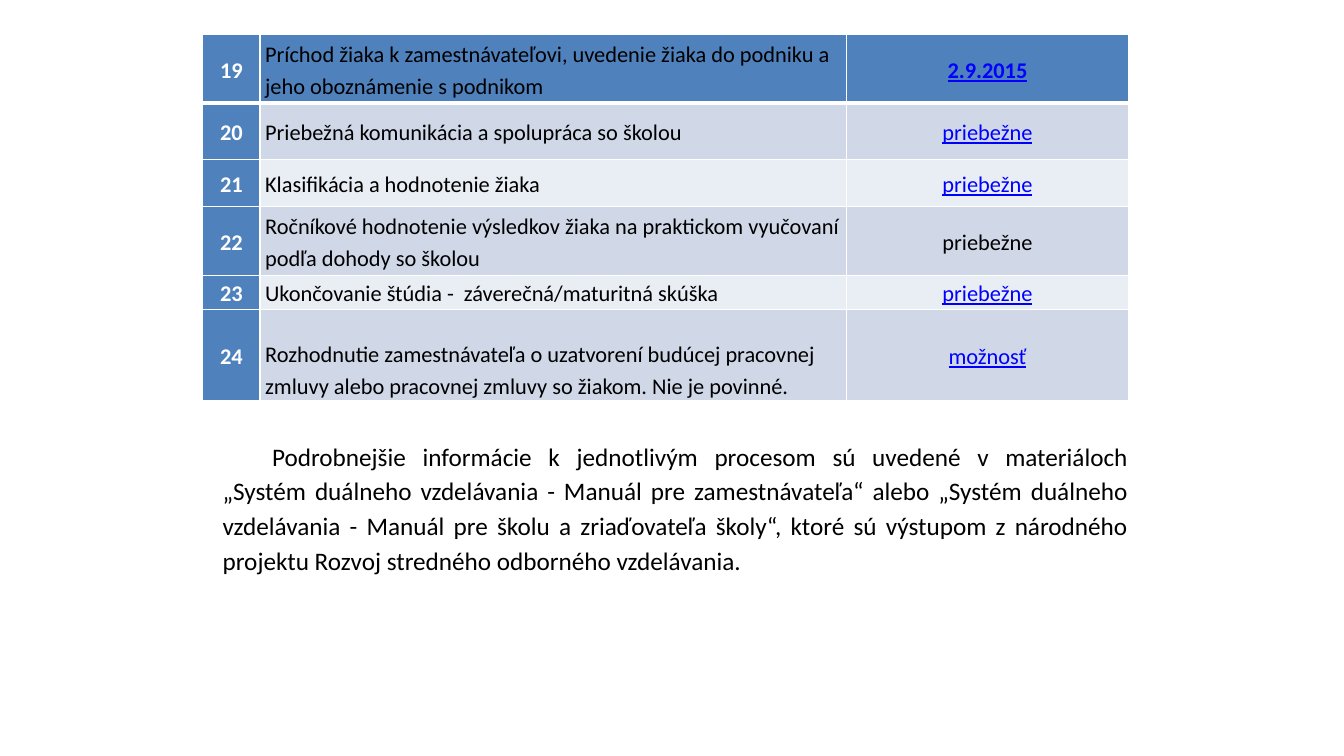
from lxml.etree import SubElement
from pptx import Presentation
from pptx.dml.color import RGBColor
from pptx.enum.text import MSO_ANCHOR, MSO_AUTO_SIZE, PP_ALIGN
from pptx.oxml.ns import qn
from pptx.util import Inches, Pt

COLORS = {
    "blue": "4F81BD",
    "band": "D0D8E8",
    "light": "E9EDF4",
    "link": "0000FF",
    "black": "000000",
    "white": "FFFFFF",
}
COL_WIDTHS = [0.57, 5.82, 2.79]
ROW_HEIGHTS = [0.68, 0.56, 0.47, 0.68, 0.34, 0.9]
STEPS = [
    ("Príchod žiaka k zamestnávateľovi, uvedenie žiaka do podniku a jeho oboznámenie s podnikom", "2.9.2015"),
    ("Priebežná komunikácia a spolupráca so školou", "priebežne"),
    ("Klasifikácia a hodnotenie žiaka", "priebežne"),
    ("Ročníkové hodnotenie výsledkov žiaka na praktickom vyučovaní podľa dohody so školou", "priebežne"),
    ("Ukončovanie štúdia -  záverečná/maturitná skúška", "priebežne"),
    ("Rozhodnutie zamestnávateľa o uzatvorení budúcej pracovnej zmluvy alebo pracovnej zmluvy so žiakom. Nie je povinné.", "možnosť"),
]
FIRST_STEP = 19
PLAIN_STEP = 22
NOTE = (
    "Podrobnejšie informácie k jednotlivým procesom sú uvedené v materiáloch "
    "„Systém duálneho vzdelávania - Manuál pre zamestnávateľa“ alebo "
    "„Systém duálneho vzdelávania - Manuál pre školu a zriaďovateľa školy“, "
    "ktoré sú výstupom z národného projektu Rozvoj stredného odborného vzdelávania."
)


def write(tf, text, align, size, color, after=0, **font):
    p = tf.paragraphs[0]
    p.alignment = align
    p.line_spacing = 1.15
    p.space_after = Pt(after)
    r = p.add_run()
    r.text = text
    r.font.color.rgb = RGBColor.from_string(COLORS[color])
    for name, value in {"name": "Calibri", "size": Pt(size), **font}.items():
        setattr(r.font, name, value)
    return p


def add_borders(cell, top, bottom):
    tcPr = cell._tc.get_or_add_tcPr()
    for side, width in {"L": 1, "R": 1, "T": top, "B": bottom}.items():
        ln = SubElement(tcPr, qn(f"a:ln{side}"), w=str(Pt(width)))
        fill = SubElement(ln, qn("a:solidFill"))
        SubElement(fill, qn("a:srgbClr"), val=COLORS["white"])


prs = Presentation()
prs.slide_width = Inches(13.33)
prs.slide_height = Inches(7.5)
s = prs.slides.add_slide(prs.slide_layouts[6])

table = s.shapes.add_table(
    len(STEPS), len(COL_WIDTHS), Inches(2.01), Inches(0.34), Inches(9.18), Inches(3.63)
).table
for col, width in zip(table.columns, COL_WIDTHS):
    col.width = Inches(width)
for row, height in zip(table.rows, ROW_HEIGHTS):
    row.height = Inches(height)

cell_format = {
    "margin_left": Inches(0.05),
    "margin_right": Inches(0.05),
    "margin_top": 0,
    "margin_bottom": 0,
    "vertical_anchor": MSO_ANCHOR.MIDDLE,
}
for i, (task, term) in enumerate(STEPS):
    number = FIRST_STEP + i
    row_fill = "blue" if i == 0 else "band" if i % 2 else "light"
    cells = table.rows[i].cells
    for cell, fill in zip(cells, ["blue", row_fill, row_fill]):
        for name, value in cell_format.items():
            setattr(cell, name, value)
        add_borders(cell, 3 if i == 1 else 1, 3 if i == 0 else 1)
        cell.fill.solid()
        cell.fill.fore_color.rgb = RGBColor.from_string(COLORS[fill])
    linked = number != PLAIN_STEP
    write(cells[0].text_frame, str(number), PP_ALIGN.CENTER, 16, "white", bold=True)
    write(cells[1].text_frame, task, PP_ALIGN.LEFT, 16, "black", 10, bold=False)
    write(cells[2].text_frame, term, PP_ALIGN.CENTER, 16, "link" if linked else "black",
          bold=i == 0, underline=linked)
table.cell(len(STEPS) - 1, 1).vertical_anchor = MSO_ANCHOR.BOTTOM

tf = s.shapes.add_textbox(Inches(2.11), Inches(4.28), Inches(9.18), Inches(1.49)).text_frame
tf.word_wrap = True
tf.auto_size = MSO_AUTO_SIZE.SHAPE_TO_FIT_TEXT
p = write(tf, NOTE, PP_ALIGN.JUSTIFY, 18, "black", 10)
p._p.get_or_add_pPr().set("indent", str(Inches(0.49)))

prs.save("out.pptx")
